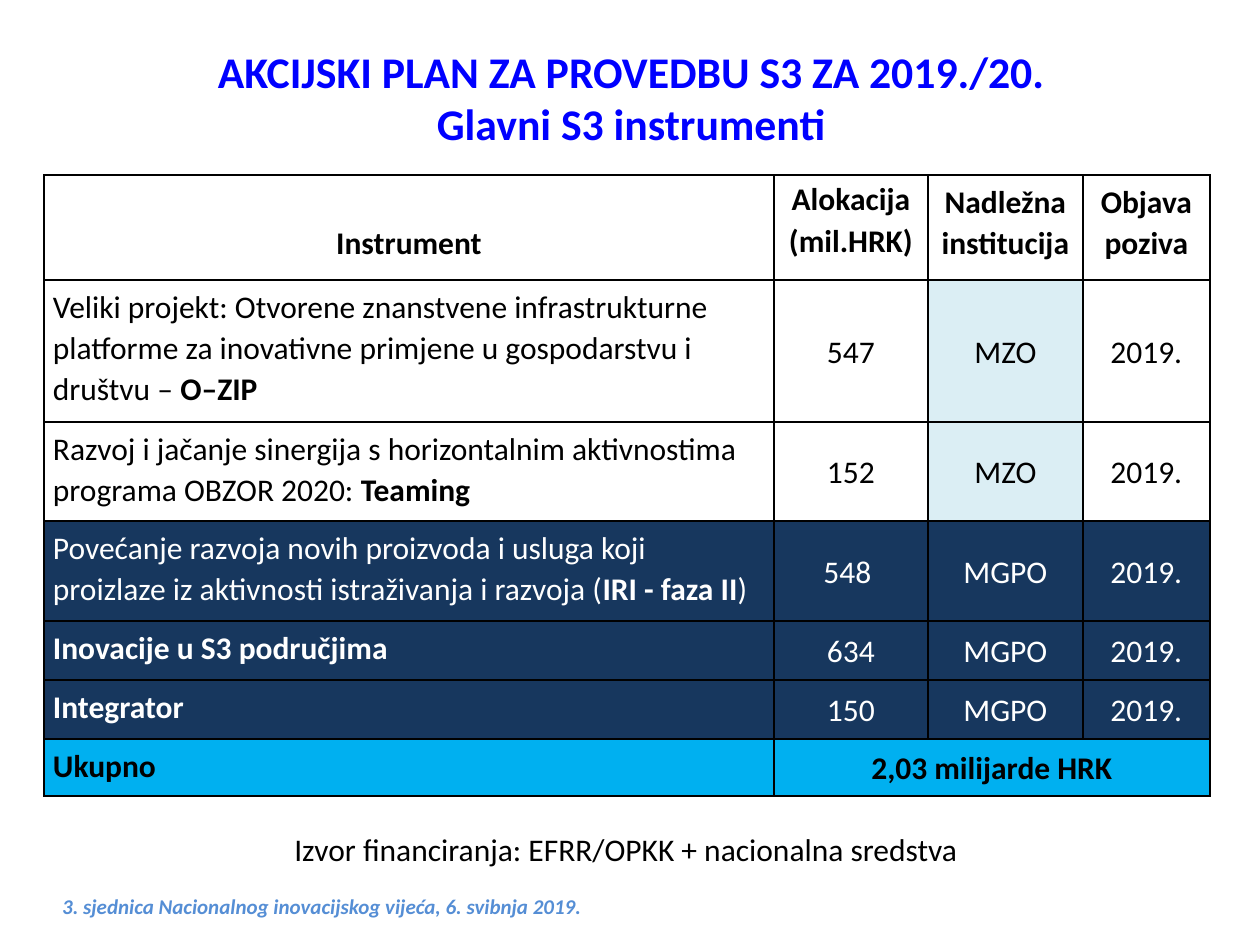
from dataclasses import dataclass

from lxml.etree import SubElement
from pptx import Presentation
from pptx.dml.color import RGBColor as Rgb
from pptx.enum.text import MSO_ANCHOR as Anchor, MSO_AUTO_SIZE as AutoSize, PP_ALIGN as Align
from pptx.oxml.ns import qn
from pptx.util import Emu, Pt


@dataclass(frozen=True)
class Theme:
    font: str = "Calibri"
    title_size: int = 25
    body_size: int = 18
    footer_size: int = 12
    title: str = "0000FF"
    footer: str = "558ED5"
    black: str = "000000"
    white: str = "FFFFFF"
    pale: str = "DBEEF4"
    navy: str = "17375E"
    cyan: str = "00B0F0"
    border: float = 0.96
    line_spacing: float = 1.07


THEME = Theme()
PX_PER_INCH = 126
COLUMNS = [730, 154, 155, 127]
ROWS = [105, 142, 99, 100, 59, 59, 57]
HEADERS = [["Instrument"], ["Alokacija", "(mil.HRK)"], ["Nadležna institucija"], ["Objava poziva"]]
INSTRUMENTS = [
    ([("Veliki projekt: Otvorene znanstvene infrastrukturne platforme za inovativne "
       "primjene u gospodarstvu i društvu – ", False), ("O–ZIP", True)], "547", "MZO"),
    ([("Razvoj i jačanje sinergija s horizontalnim aktivnostima programa OBZOR 2020: ", False),
      ("Teaming", True)], "152", "MZO"),
    ([("Povećanje razvoja novih proizvoda i usluga koji proizlaze iz aktivnosti "
       "istraživanja i razvoja (", False), ("IRI - faza II", True), (")", False)], "548 ", "MGPO"),
    ([("Inovacije u S3 područjima", True)], "634", "MGPO"),
    ([("Integrator", True)], "150", "MGPO"),
]
YEAR = "2019."


def px(value):
    return Emu(round(value * 914400 / PX_PER_INCH))


def add_run(paragraph, text, size, color, bold=False, italic=False):
    run = paragraph.add_run()
    run.text = text
    run.font.name = THEME.font
    run.font.size = Pt(size)
    run.font.bold = bold
    run.font.italic = italic
    run.font.color.rgb = Rgb.from_string(color)


def get_paragraph(frame, index):
    return frame.paragraphs[0] if index == 0 else frame.add_paragraph()


def add_title(slide, left, top, width, height):
    title = slide.shapes.title
    title.left, title.top, title.width, title.height = map(px, (left, top, width, height))
    frame = title.text_frame
    frame.auto_size = AutoSize.NONE
    frame.vertical_anchor = Anchor.MIDDLE
    lines = ["AKCIJSKI PLAN ZA PROVEDBU S3 ZA 2019./20.", "Glavni S3 instrumenti"]
    for index, line in enumerate(lines):
        paragraph = get_paragraph(frame, index)
        paragraph.alignment = Align.CENTER
        add_run(paragraph, line, THEME.title_size, THEME.title, bold=True)


def add_caption(slide, box, text, size, color, align, emphasis=False):
    frame = slide.shapes.add_textbox(*map(px, box)).text_frame
    frame.word_wrap = True
    paragraph = frame.paragraphs[0]
    paragraph.alignment = align
    add_run(paragraph, text, size, color, bold=emphasis, italic=emphasis)


def add_borders(cell):
    properties = cell._tc.get_or_add_tcPr()
    for position, side in enumerate(("lnL", "lnR", "lnT", "lnB")):
        line = SubElement(properties, qn(f"a:{side}"), w=str(Pt(THEME.border)))
        fill = SubElement(line, qn("a:solidFill"))
        SubElement(fill, qn("a:srgbClr"), val=THEME.black)
        properties.remove(line)
        properties.insert(position, line)


def fill_cell(cell, paragraphs, fill, color, align=Align.CENTER, anchor=Anchor.MIDDLE):
    cell.fill.solid()
    cell.fill.fore_color.rgb = Rgb.from_string(fill)
    cell.margin_left = cell.margin_right = px(9)
    cell.margin_top = cell.margin_bottom = px(6)
    cell.vertical_anchor = anchor
    for index, runs in enumerate(paragraphs):
        paragraph = get_paragraph(cell.text_frame, index)
        paragraph.alignment = align
        is_last = index == len(paragraphs) - 1
        paragraph.line_spacing = THEME.line_spacing if is_last else 1.0
        for text, bold in runs:
            add_run(paragraph, text, THEME.body_size, color, bold)


def add_instrument_table(slide, left, top):
    box = map(px, (left, top, sum(COLUMNS), sum(ROWS)))
    table = slide.shapes.add_table(len(ROWS), len(COLUMNS), *box).table
    table.first_row = table.horz_banding = False
    for column, width in zip(table.columns, COLUMNS):
        column.width = px(width)
    for row, height in zip(table.rows, ROWS):
        row.height = px(height)

    for column, lines in enumerate(HEADERS):
        paragraphs = [[(line, True)] for line in lines]
        fill_cell(table.cell(0, column), paragraphs, THEME.white, THEME.black, anchor=Anchor.TOP)
    table.cell(0, 0).margin_top = px(47)

    for row, (name, amount, institution) in enumerate(INSTRUMENTS, start=1):
        is_science = institution == "MZO"
        fill, color = (THEME.white, THEME.black) if is_science else (THEME.navy, THEME.white)
        fill_cell(table.cell(row, 0), [name], fill, color, Align.LEFT, Anchor.TOP)
        for column, text in enumerate((amount, institution, YEAR), start=1):
            cell_fill = THEME.pale if is_science and column == 2 else fill
            fill_cell(table.cell(row, column), [[(text, False)]], cell_fill, color)

    total = len(ROWS) - 1
    table.cell(total, 1).merge(table.cell(total, 3))
    fill_cell(table.cell(total, 0), [[("Ukupno", True)]], THEME.cyan, THEME.black,
              Align.LEFT, Anchor.TOP)
    fill_cell(table.cell(total, 1), [[("2,03 milijarde HRK", True)]], THEME.cyan, THEME.black)
    for cell in table.iter_cells():
        add_borders(cell)


def main():
    presentation = Presentation()
    presentation.slide_width, presentation.slide_height = px(1260), px(945)
    slide = presentation.slides.add_slide(presentation.slide_layouts[5])
    add_title(slide, 33, 33, 1196, 128)
    add_instrument_table(slide, 44, 175)
    add_caption(slide, (282, 824, 696, 50), "Izvor financiranja: EFRR/OPKK + nacionalna sredstva",
                THEME.body_size, THEME.black, Align.LEFT)
    add_caption(slide, (7, 887, 630, 38),
                "3. sjednica Nacionalnog inovacijskog vijeća, 6. svibnja 2019.",
                THEME.footer_size, THEME.footer, Align.CENTER, emphasis=True)
    presentation.save("out.pptx")


if __name__ == "__main__":
    main()
